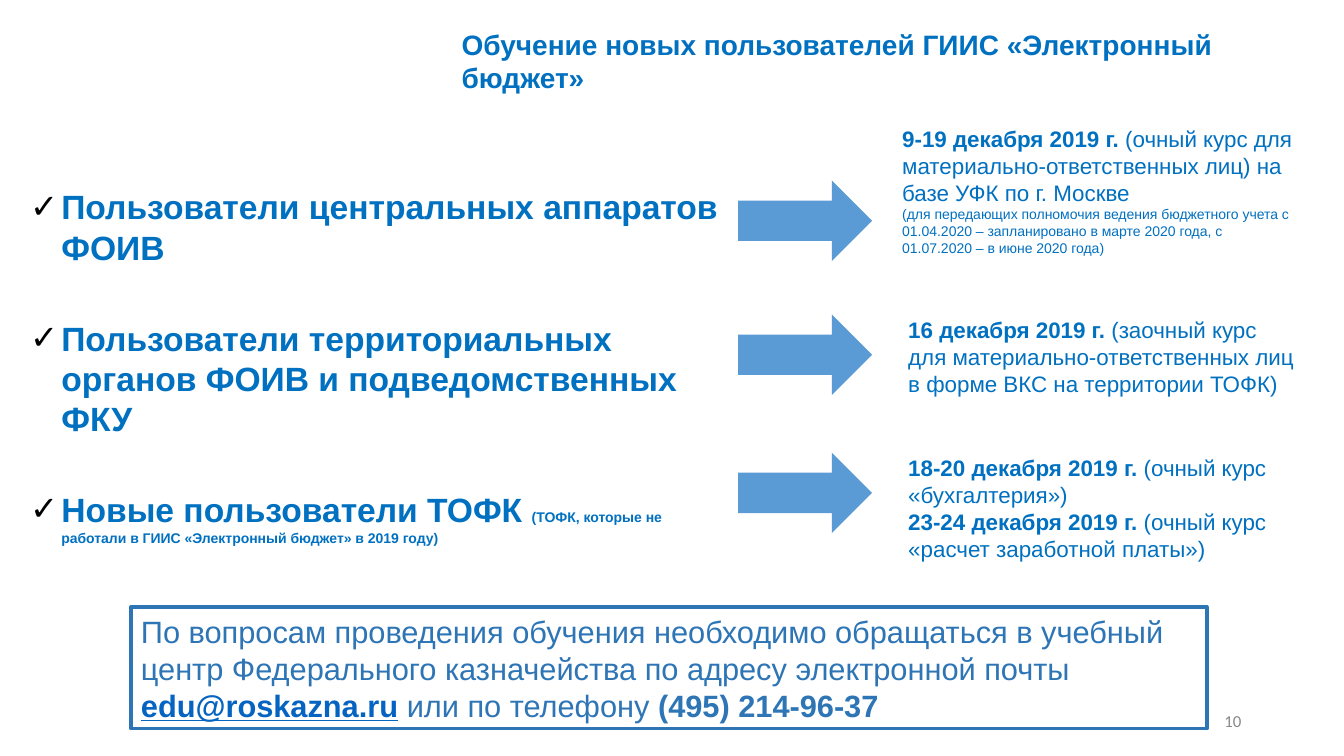
from dataclasses import dataclass

from lxml.etree import SubElement
from pptx import Presentation
from pptx.dml.color import RGBColor
from pptx.enum.shapes import MSO_SHAPE
from pptx.enum.text import MSO_ANCHOR, PP_ALIGN
from pptx.oxml.ns import qn
from pptx.util import Inches, Pt


@dataclass(frozen=True)
class Theme:
    font: str = "Arial"
    number_font: str = "Calibri"
    text: str = "0070C0"
    arrow: str = "5B9BD5"
    contact: str = "2E75B6"
    link: str = "0563C1"
    number: str = "898989"
    bullet: str = "000000"
    title_size: int = 20
    audience_size: int = 24
    schedule_size: int = 16
    note_size: int = 10
    contact_size: int = 22
    number_size: int = 12


THEME = Theme()

AUDIENCES = [
    [("Пользователи центральных аппаратов ФОИВ", {})],
    [("Пользователи территориальных органов ФОИВ и подведомственных ФКУ", {})],
    [
        ("Новые пользователи ТОФК ", {}),
        ("(ТОФК, которые не работали в ГИИС «Электронный бюджет» в 2019 году)",
         {"size": THEME.note_size}),
    ],
]

# Each entry: text box (left, top, width, height), arrow top, paragraphs.
SCHEDULE = [
    ((8.85, 1.19, 4.07, 1.41), 1.79, [
        [("9-19 декабря 2019 г. ", {"bold": True}),
         ("(очный курс для материально-ответственных лиц) на базе УФК по г. Москве", {})],
        [("(для передающих полномочия ведения бюджетного учета с 01.04.2020 – "
          "запланировано в марте 2020 года, с 01.07.2020 – в июне 2020 года)",
          {"size": THEME.note_size})],
    ]),
    ((8.91, 3.09, 4.07, 0.91), 3.12, [
        [("16 декабря 2019 г. ", {"bold": True}),
         ("(заочный курс для материально-ответственных лиц "
          "в форме ВКС на территории ТОФК)", {})],
    ]),
    ((8.91, 4.46, 4.07, 1.18), 4.49, [
        [("18-20 декабря 2019 г. ", {"bold": True}), ("(очный курс «бухгалтерия»)", {})],
        [("23-24 декабря 2019 г. ", {"bold": True}),
         ("(очный курс «расчет заработной платы»)", {})],
    ]),
]

CONTACT = [[
    ("По вопросам проведения обучения необходимо обращаться в учебный центр "
     "Федерального казначейства по адресу электронной почты ", {}),
    ("edu@roskazna.ru", {"bold": True, "underline": True, "color": THEME.link}),
    (" или по телефону", {}),
    (" (495) 214-96-37", {"bold": True}),
]]


def place(box):
    return [Inches(length) for length in box]


def add_run(paragraph, text, *, size, color=THEME.text, bold=False,
            underline=False, font=THEME.font):
    run = paragraph.add_run()
    run.text = text
    run.font.name = font
    run.font.size = Pt(size)
    run.font.bold = bold
    run.font.underline = underline
    run.font.color.rgb = RGBColor.from_string(color)


def write(shape, paragraphs, *, align=PP_ALIGN.LEFT, anchor=MSO_ANCHOR.TOP,
          bulleted=False, space_after=0, **style):
    """Fill a shape with paragraphs of (text, format) runs; style is the default format."""
    frame = shape.text_frame
    frame.word_wrap = True
    frame.vertical_anchor = anchor
    for index, runs in enumerate(paragraphs):
        paragraph = frame.add_paragraph() if index else frame.paragraphs[0]
        paragraph.alignment = align
        paragraph.space_after = Pt(space_after)
        if bulleted:
            add_check_mark(paragraph)
        for text, changes in runs:
            add_run(paragraph, text, **{**style, **changes})


def add_check_mark(paragraph, indent=0.31):
    properties = paragraph._p.get_or_add_pPr()
    properties.set("marL", str(Inches(indent)))
    properties.set("indent", str(-Inches(indent)))
    color = SubElement(properties, qn("a:buClr"))
    SubElement(color, qn("a:srgbClr"), val=THEME.bullet)
    SubElement(properties, qn("a:buFont"), typeface=THEME.font)
    SubElement(properties, qn("a:buChar"), char="✓")


def add_text(slide, box, paragraphs, **style):
    write(slide.shapes.add_textbox(*place(box)), paragraphs, **style)


def add_arrow(slide, box):
    arrow = slide.shapes.add_shape(MSO_SHAPE.RIGHT_ARROW, *place(box))
    arrow.shadow.inherit = False
    arrow.fill.solid()
    arrow.fill.fore_color.rgb = RGBColor.from_string(THEME.arrow)
    arrow.line.fill.background()


def add_schedule(slide):
    for box, arrow_top, paragraphs in SCHEDULE:
        add_arrow(slide, (7.32, arrow_top, 1.33, 0.8))
        add_text(slide, box, paragraphs, size=THEME.schedule_size)


def add_contact(slide, box):
    frame = slide.shapes.add_shape(MSO_SHAPE.RECTANGLE, *place(box))
    frame.shadow.inherit = False
    frame.fill.background()
    frame.line.color.rgb = RGBColor.from_string(THEME.contact)
    frame.line.width = Pt(2.5)
    write(frame, CONTACT, anchor=MSO_ANCHOR.MIDDLE,
          size=THEME.contact_size, color=THEME.contact)


def main():
    presentation = Presentation()
    presentation.slide_width = Inches(13.33)
    presentation.slide_height = Inches(7.5)
    slide = presentation.slides.add_slide(presentation.slide_layouts[6])
    add_text(slide, (4.48, 0.22, 8.74, 0.77),
             [[("Обучение новых пользователей ГИИС «Электронный бюджет»", {})]],
             size=THEME.title_size, bold=True)
    add_text(slide, (0.2, 1.8, 7.12, 3.7), AUDIENCES, bulleted=True,
             space_after=36, size=THEME.audience_size, bold=True)
    add_schedule(slide)
    add_contact(slide, (1.3, 6.02, 10.67, 1.21))
    add_text(slide, (11.97, 6.95, 0.44, 0.4), [[("10", {})]],
             align=PP_ALIGN.RIGHT, anchor=MSO_ANCHOR.MIDDLE,
             size=THEME.number_size, color=THEME.number, font=THEME.number_font)
    presentation.save("out.pptx")


if __name__ == "__main__":
    main()
